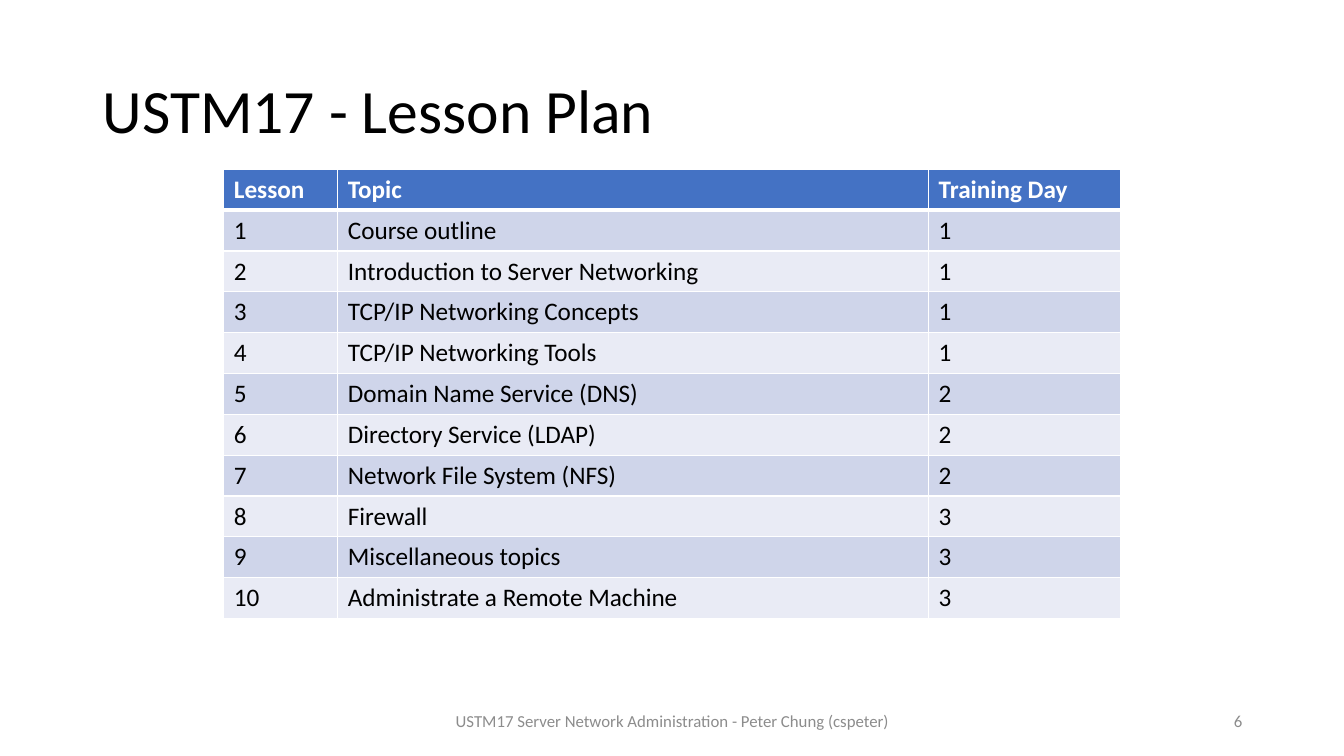
from lxml import etree
from pptx import Presentation
from pptx.dml.color import RGBColor
from pptx.enum import text
from pptx.oxml import ns
from pptx.util import Inches, Pt

FONT = "Calibri"
COLORS = {
    "ink": "000000",
    "white": "FFFFFF",
    "muted": "8C8C8C",
    "header": "4472C4",
    "odd": "CFD5EA",
    "even": "E9EBF5",
}
HEADINGS = ("Lesson", "Topic", "Training Day")
LESSONS = [
    ("Course outline", 1),
    ("Introduction to Server Networking", 1),
    ("TCP/IP Networking Concepts", 1),
    ("TCP/IP Networking Tools", 1),
    ("Domain Name Service (DNS)", 2),
    ("Directory Service (LDAP)", 2),
    ("Network File System (NFS)", 2),
    ("Firewall", 3),
    ("Miscellaneous topics", 3),
    ("Administrate a Remote Machine", 3),
]
COLUMN_WIDTHS = (1.13, 5.86, 1.9)


def color(name):
    return RGBColor.from_string(COLORS[name])


def style_text(para, size, color_name, bold=False):
    for span in para.runs:
        span.font.name = FONT
        span.font.size = Pt(size)
        span.font.bold = bold
        span.font.color.rgb = color(color_name)


def add_label(page, box, wording, size, color_name, align):
    """Place one vertically centred line of text in the box."""
    frame = page.shapes.add_textbox(*map(Inches, box)).text_frame
    frame.word_wrap = True
    frame.vertical_anchor = text.MSO_ANCHOR.MIDDLE
    para = frame.paragraphs[0]
    para.text = wording
    para.alignment = align
    style_text(para, size, color_name)
    return para


def add_title(page, box):
    para = add_label(page, box, "USTM17 - Lesson Plan", 44, "ink", text.PP_ALIGN.LEFT)
    para.line_spacing = 0.9


def add_footer(page, box):
    """Centre the course name in the box and set the page number at its right."""
    left, top, width, height = box
    name_width, number_width = 4.5, 3
    name_box = (left + (width - name_width) / 2, top, name_width, height)
    number_box = (left + width - number_width, top, number_width, height)
    course = "USTM17 Server Network Administration - Peter Chung (cspeter)"
    add_label(page, name_box, course, 12, "muted", text.PP_ALIGN.CENTER)
    add_label(page, number_box, "6", 12, "muted", text.PP_ALIGN.RIGHT)


def set_borders(cell, top, bottom):
    """Draw white borders, with the top and bottom widths given in points."""
    properties = cell._tc.get_or_add_tcPr()
    for side, width in (("L", 1), ("R", 1), ("T", top), ("B", bottom)):
        line = etree.SubElement(properties, ns.qn(f"a:ln{side}"), w=str(Pt(width)))
        fill = etree.SubElement(line, ns.qn("a:solidFill"))
        etree.SubElement(fill, ns.qn("a:srgbClr"), val=COLORS["white"])


def add_lesson_table(page, box):
    rows = [HEADINGS]
    rows += [(number, *lesson) for number, lesson in enumerate(LESSONS, 1)]
    frame = page.shapes.add_table(len(rows), len(HEADINGS), *map(Inches, box))
    table = frame.table
    for column, width in zip(table.columns, COLUMN_WIDTHS):
        column.width = Inches(width)
    for index, values in enumerate(rows):
        is_header = index == 0
        band = "header" if is_header else ("even", "odd")[index % 2]
        for cell, value in zip(table.rows[index].cells, values):
            set_borders(cell, 3 if index == 1 else 1, 3 if is_header else 1)
            cell.fill.solid()
            cell.fill.fore_color.rgb = color(band)
            cell.text_frame.text = str(value)
            style_text(cell.text_frame.paragraphs[0], 18,
                       "white" if is_header else "ink", is_header)


def main():
    deck = Presentation()
    deck.slide_width, deck.slide_height = Inches(13.33), Inches(7.5)
    page = deck.slides.add_slide(deck.slide_layouts[6])
    add_title(page, (0.92, 0.4, 11.5, 1.45))
    add_footer(page, (0.92, 6.95, 11.5, 0.4))
    add_lesson_table(page, (2.22, 1.68, sum(COLUMN_WIDTHS), 4.46))
    deck.save("out.pptx")


if __name__ == "__main__":
    main()
